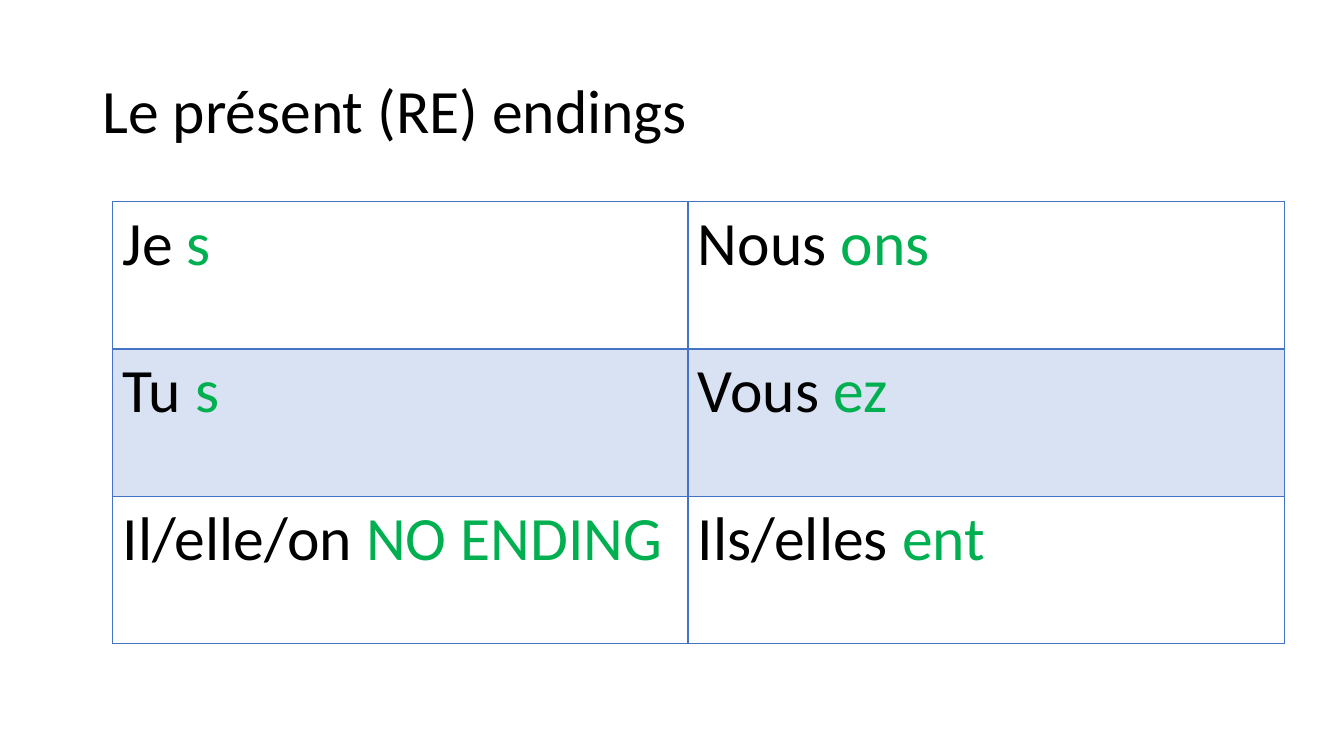
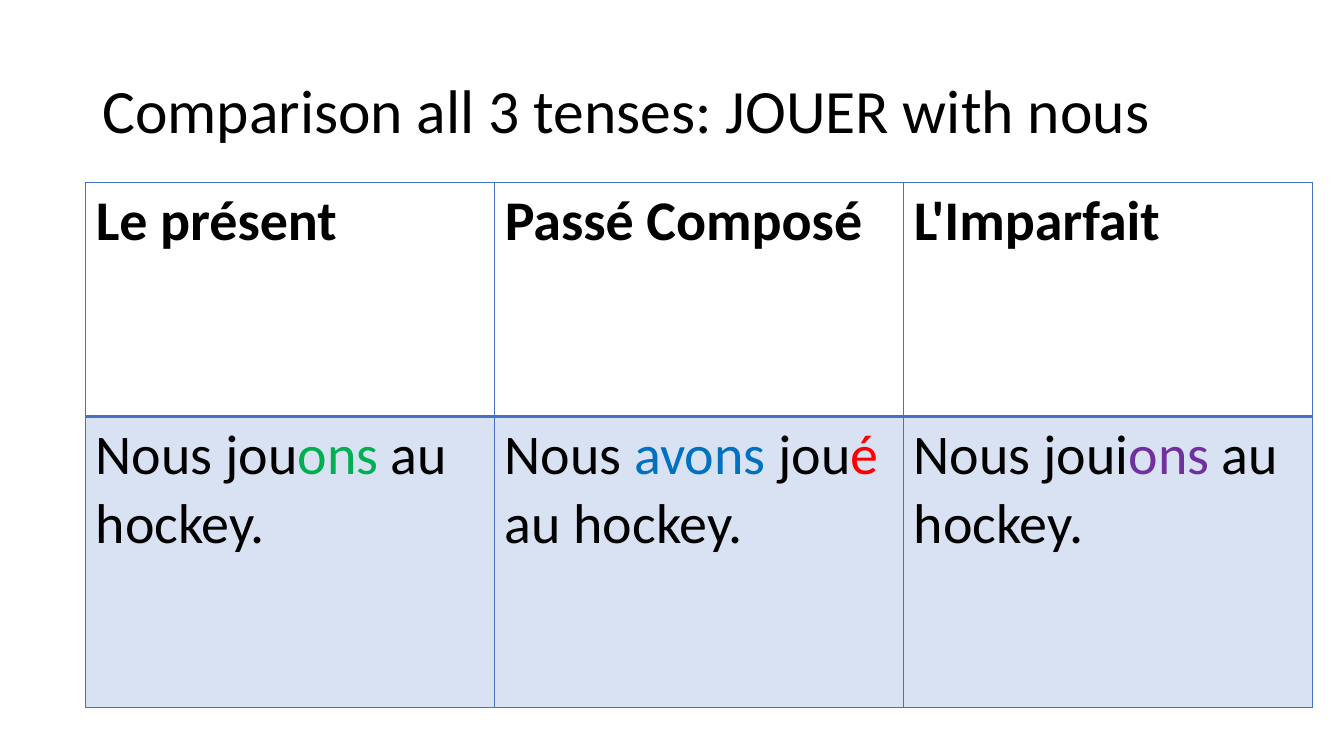
"""Build two French grammar slides, each with a title and a bordered table."""
from dataclasses import dataclass

from lxml import etree
from pptx import Presentation
from pptx import util as u
from pptx.dml.color import RGBColor
from pptx.enum import text
from pptx.oxml.ns import qn

COLOURS = {
    "ink": "000000",
    "border": "4472C4",
    "band": "D9E2F3",
    "green": "00B050",
    "blue": "0070C0",
    "red": "FF0000",
    "purple": "7030A0",
}
FONT = "Calibri"
TITLE_SIZE = 44
GRID_COLUMNS, GRID_ROWS = 160, 90
SLIDE_WIDTH, SLIDE_HEIGHT = u.Inches(13.333), u.Inches(7.5)
TITLE_AREA = (11, 4.8, 138, 17.4)


@dataclass(frozen=True)
class Span:
    """A piece of text in one named colour."""

    words: str
    colour: str = "ink"


@dataclass(frozen=True)
class Grammar:
    """A slide's title and table, measured in grid columns and rows."""

    title: str
    left: float
    top: float
    widths: tuple[float, ...]
    heights: tuple[float, ...]
    size: int
    bold_header: bool
    cells: tuple[tuple[tuple[Span, ...], ...], ...]


def ending(pronoun: str, suffix: str) -> tuple[Span, ...]:
    """Return a pronoun followed by its green verb ending."""
    return Span(f"{pronoun} "), Span(suffix, "green")


PAGES = (
    Grammar(
        "Le présent (RE) endings", 13.4, 24, (68.5, 71), (17.55,) * 3, 44, False,
        (
            (ending("Je", "s"), ending("Nous", "ons")),
            (ending("Tu", "s"), ending("Vous", "ez")),
            (ending("Il/elle/on", "NO ENDING"), ending("Ils/elles", "ent")),
        ),
    ),
    Grammar(
        "Comparison all 3 tenses: JOUER with nous", 10.2, 21.7, (48.7,) * 3, (27.9, 34.6), 40, True,
        (
            ((Span("Le présent"),), (Span("Passé Composé"),), (Span("L'Imparfait"),)),
            (
                (Span("Nous jou"), Span("ons", "green"), Span(" au hockey.")),
                (Span("Nous "), Span("avons ", "blue"), Span("jou"), Span("é", "red"), Span(" au hockey.")),
                (Span("Nous joui"), Span("ons", "purple"), Span(" au hockey.")),
            ),
        ),
    ),
)


def across(columns: float) -> int:
    """Return the length of a number of grid columns."""
    return round(SLIDE_WIDTH * columns / GRID_COLUMNS)


def down(rows: float) -> int:
    """Return the length of a number of grid rows."""
    return round(SLIDE_HEIGHT * rows / GRID_ROWS)


def write_spans(para, spans: tuple[Span, ...], size: int, bold: bool = False) -> None:
    """Add coloured spans to a paragraph."""
    for span in spans:
        run = para.add_run()
        run.text = span.words
        for name, value in {"name": FONT, "size": u.Pt(size), "bold": bold}.items():
            setattr(run.font, name, value)
        run.font.color.rgb = RGBColor.from_string(COLOURS[span.colour])


def add_title(page, title: str) -> None:
    """Add the slide title, centred vertically in the title area."""
    left, top, width, height = TITLE_AREA
    box = page.shapes.add_textbox(across(left), down(top), across(width), down(height))
    frame = box.text_frame
    for name, value in {"word_wrap": True, "vertical_anchor": text.MSO_ANCHOR.MIDDLE}.items():
        setattr(frame, name, value)
    para = frame.paragraphs[0]
    para.line_spacing = 0.9
    write_spans(para, (Span(title),), TITLE_SIZE)


def add_borders(cell, weights: dict[str, float]) -> None:
    """Draw a cell's borders with a weight in points for each side."""
    properties = cell._tc.get_or_add_tcPr()
    for side, weight in weights.items():
        line = etree.SubElement(properties, qn(f"a:ln{side}"), w=str(u.Pt(weight)))
        fill = etree.SubElement(line, qn("a:solidFill"))
        etree.SubElement(fill, qn("a:srgbClr"), val=COLOURS["border"])


def add_table(page, grammar: Grammar) -> None:
    """Add the table with every second row tinted."""
    table = page.shapes.add_table(
        len(grammar.heights), len(grammar.widths),
        across(grammar.left), down(grammar.top),
        across(sum(grammar.widths)), down(sum(grammar.heights)),
    ).table
    for name in ("first_row", "horz_banding"):
        setattr(table, name, False)
    for column, width in zip(table.columns, grammar.widths):
        column.width = across(width)
    for index, (row, height) in enumerate(zip(table.rows, grammar.heights)):
        row.height = down(height)
        header = index == 0
        weights = {"L": 1, "R": 1, "T": 2 if index == 1 else 1, "B": 2 if header else 1}
        for cell, spans in zip(row.cells, grammar.cells[index]):
            add_borders(cell, weights)
            if index % 2:
                cell.fill.solid()
                cell.fill.fore_color.rgb = RGBColor.from_string(COLOURS["band"])
            else:
                cell.fill.background()
            write_spans(cell.text_frame.paragraphs[0], spans, grammar.size, header and grammar.bold_header)


def main() -> None:
    """Build and save the deck."""
    deck = Presentation()
    deck.slide_width, deck.slide_height = SLIDE_WIDTH, SLIDE_HEIGHT
    for grammar in PAGES:
        page = deck.slides.add_slide(deck.slide_layouts[6])
        add_title(page, grammar.title)
        add_table(page, grammar)
    deck.save("out.pptx")


if __name__ == "__main__":
    main()
